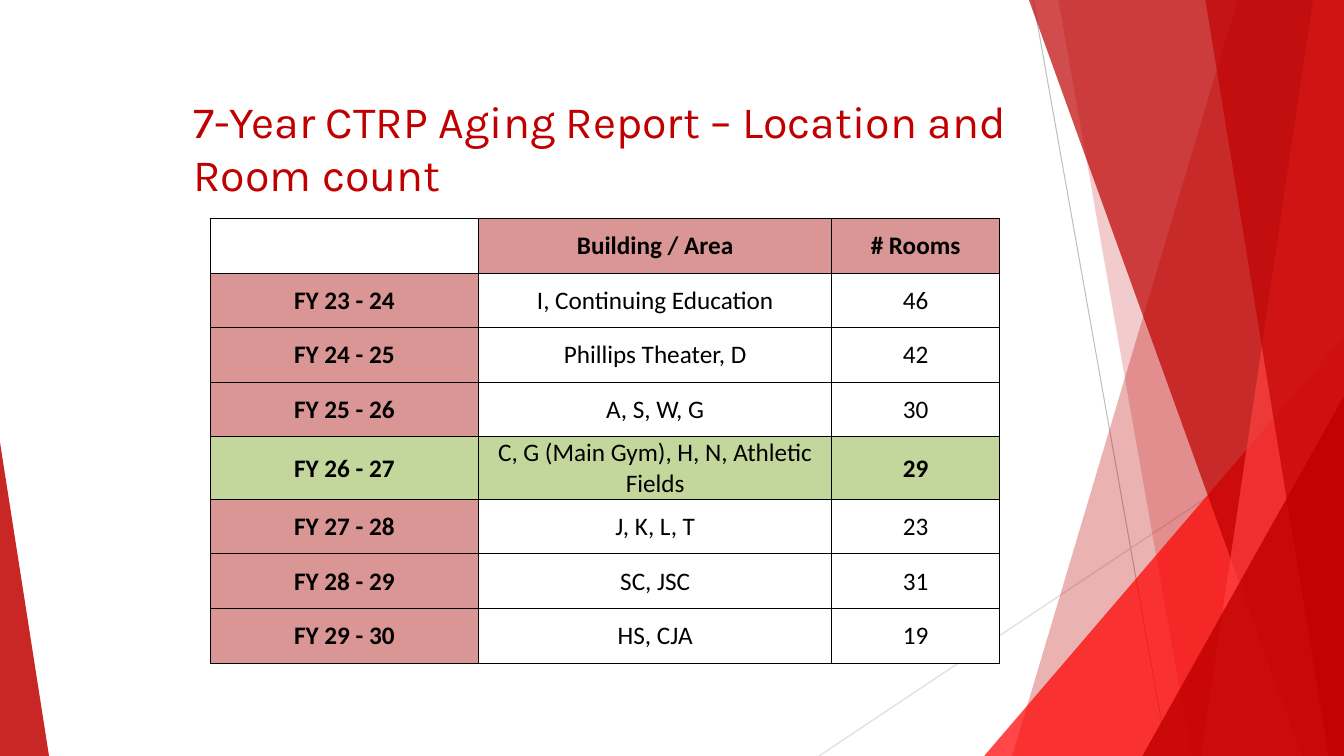
"""Build the aging report slide with its room count table."""
from lxml.etree import SubElement
from pptx import Presentation
from pptx.dml.color import RGBColor
from pptx.enum.shapes import MSO_CONNECTOR
from pptx.enum.text import MSO_ANCHOR, PP_ALIGN
from pptx.oxml.ns import qn
from pptx.util import Pt

CRIMSON = RGBColor(0xC0, 0x00, 0x00)
DARK_RED = RGBColor(0xBE, 0x00, 0x00)
RED = RGBColor(0xFF, 0x00, 0x00)
LIGHT_RED = RGBColor(0xFF, 0x40, 0x40)
ROSE = RGBColor(0xD9, 0x96, 0x94)
GREEN = RGBColor(0xC3, 0xD6, 0x9B)
GRAY = RGBColor(0xBE, 0xBE, 0xBE)
PALE_GRAY = RGBColor(0xD9, 0xD9, 0xD9)
WHITE = RGBColor(0xFF, 0xFF, 0xFF)
BLACK = RGBColor(0x00, 0x00, 0x00)

WIDTH, HEIGHT = 960, 540
HIGHLIGHTED_YEAR = "FY 26 - 27"
RAYS = [
    ((738, 0), (834, HEIGHT), GRAY),
    ((WIDTH, 290), (585, HEIGHT), PALE_GRAY),
]
TOP_RIGHT, BOTTOM_RIGHT = (WIDTH, 0), (WIDTH, HEIGHT)
FACETS = [
    ([TOP_RIGHT, (884, 0), (723, HEIGHT), BOTTOM_RIGHT], CRIMSON, 30),
    ([TOP_RIGHT, (756, 0), (851, HEIGHT), BOTTOM_RIGHT], CRIMSON, 20),
    ([(WIDTH, 240), (703, HEIGHT), BOTTOM_RIGHT], RED, 72),
    ([TOP_RIGHT, (735, 0), (930, HEIGHT), BOTTOM_RIGHT], DARK_RED, 70),
    ([TOP_RIGHT, (938, 0), (858, HEIGHT), BOTTOM_RIGHT], LIGHT_RED, 70),
    ([TOP_RIGHT, (861, 0), (949, HEIGHT), BOTTOM_RIGHT], CRIMSON, 65),
    ([(WIDTH, 283), (816, HEIGHT), BOTTOM_RIGHT], CRIMSON, 80),
    ([(0, 316), (0, HEIGHT), (35, HEIGHT)], CRIMSON, 85),
]
COLUMN_WIDTHS = [192, 252, 120]
ROOM_COUNTS = [
    ("", "Building / Area", "# Rooms"),
    ("FY 23 - 24", "I, Continuing Education", "46"),
    ("FY 24 - 25", "Phillips Theater, D", "42"),
    ("FY 25 - 26", "A, S, W, G", "30"),
    (HIGHLIGHTED_YEAR, "C, G (Main Gym), H, N, Athletic Fields", "29"),
    ("FY 27 - 28", "J, K, L, T", "23"),
    ("FY 28 - 29", "SC, JSC", "31"),
    ("FY 29 - 30", "HS, CJA", "19"),
]


def add_ray(slide, start, end, color):
    """Draw a thin background line."""
    ray = slide.shapes.add_connector(
        MSO_CONNECTOR.STRAIGHT, *(Pt(value) for value in start + end))
    ray.line.color.rgb = color
    ray.line.width = Pt(0.72)
    SubElement(ray.element.spPr, qn("a:effectLst"))


def add_facet(slide, corners, color, opacity):
    """Draw a translucent polygon."""
    outline = slide.shapes.build_freeform(*corners[0], scale=Pt(1))
    outline.add_line_segments(corners[1:], close=True)
    facet = outline.convert_to_shape()
    facet.shadow.inherit = False
    facet.fill.solid()
    facet.fill.fore_color.rgb = color
    tint = facet.element.spPr.find(qn("a:solidFill"))[0]
    SubElement(tint, qn("a:alpha"), val=str(opacity * 1000))
    facet.line.fill.background()


def format_title(title, text):
    """Place and style the slide title."""
    title.left, title.top, title.width, title.height = (
        Pt(138), Pt(66), Pt(612), Pt(78))
    frame = title.text_frame
    frame.text = text
    frame.word_wrap = True
    frame.vertical_anchor = MSO_ANCHOR.MIDDLE
    frame.margin_left = frame.margin_right = 0
    frame.margin_top = frame.margin_bottom = 0
    heading = frame.paragraphs[0]
    heading.alignment = PP_ALIGN.LEFT
    heading.line_spacing = 1.0
    heading.font.name = "Karla"
    heading.font.size = Pt(32)
    heading.font.color.rgb = CRIMSON


def add_borders(cell):
    """Give a cell thin black borders on all sides."""
    properties = cell._tc.get_or_add_tcPr()
    for side in ("lnL", "lnR", "lnT", "lnB"):
        border = SubElement(properties, qn(f"a:{side}"), w=str(Pt(0.5)))
        ink = SubElement(border, qn("a:solidFill"))
        SubElement(ink, qn("a:srgbClr"), val=str(BLACK))


def format_cell(cell, text, fill, bold):
    """Fill in and style one table cell."""
    add_borders(cell)
    cell.fill.solid()
    cell.fill.fore_color.rgb = fill
    cell.vertical_anchor = MSO_ANCHOR.MIDDLE
    cell.margin_left = cell.margin_right = cell.margin_top = Pt(0.72)
    cell.margin_bottom = 0
    cell.text_frame.text = text
    entry = cell.text_frame.paragraphs[0]
    entry.alignment = PP_ALIGN.CENTER
    entry.font.name = "Calibri"
    entry.font.size = Pt(18)
    entry.font.bold = bold
    entry.font.color.rgb = BLACK


def add_room_table(slide):
    """Add the table of buildings and room counts by fiscal year."""
    row_height = 39
    rooms = slide.shapes.add_table(
        len(ROOM_COUNTS), len(COLUMN_WIDTHS), Pt(150), Pt(156),
        Pt(sum(COLUMN_WIDTHS)), Pt(row_height * len(ROOM_COUNTS))).table
    rooms.first_row = rooms.horz_banding = False
    for column, width in zip(rooms.columns, COLUMN_WIDTHS):
        column.width = Pt(width)
    for r, entries in enumerate(ROOM_COUNTS):
        rooms.rows[r].height = Pt(row_height)
        highlighted = entries[0] == HIGHLIGHTED_YEAR
        for c, text in enumerate(entries):
            header = r == 0 or c == 0
            fill = GREEN if highlighted else ROSE if header and text else WHITE
            bold = header or (highlighted and c == 2)
            format_cell(rooms.cell(r, c), text, fill, bold)


def main():
    """Build and save the slide."""
    deck = Presentation()
    deck.slide_width, deck.slide_height = Pt(WIDTH), Pt(HEIGHT)
    slide = deck.slides.add_slide(deck.slide_layouts[5])
    for ray in RAYS:
        add_ray(slide, *ray)
    for facet in FACETS:
        add_facet(slide, *facet)
    format_title(slide.shapes.title,
                 "7-Year CTRP Aging Report – Location and Room count")
    add_room_table(slide)
    deck.save("out.pptx")


if __name__ == "__main__":
    main()
